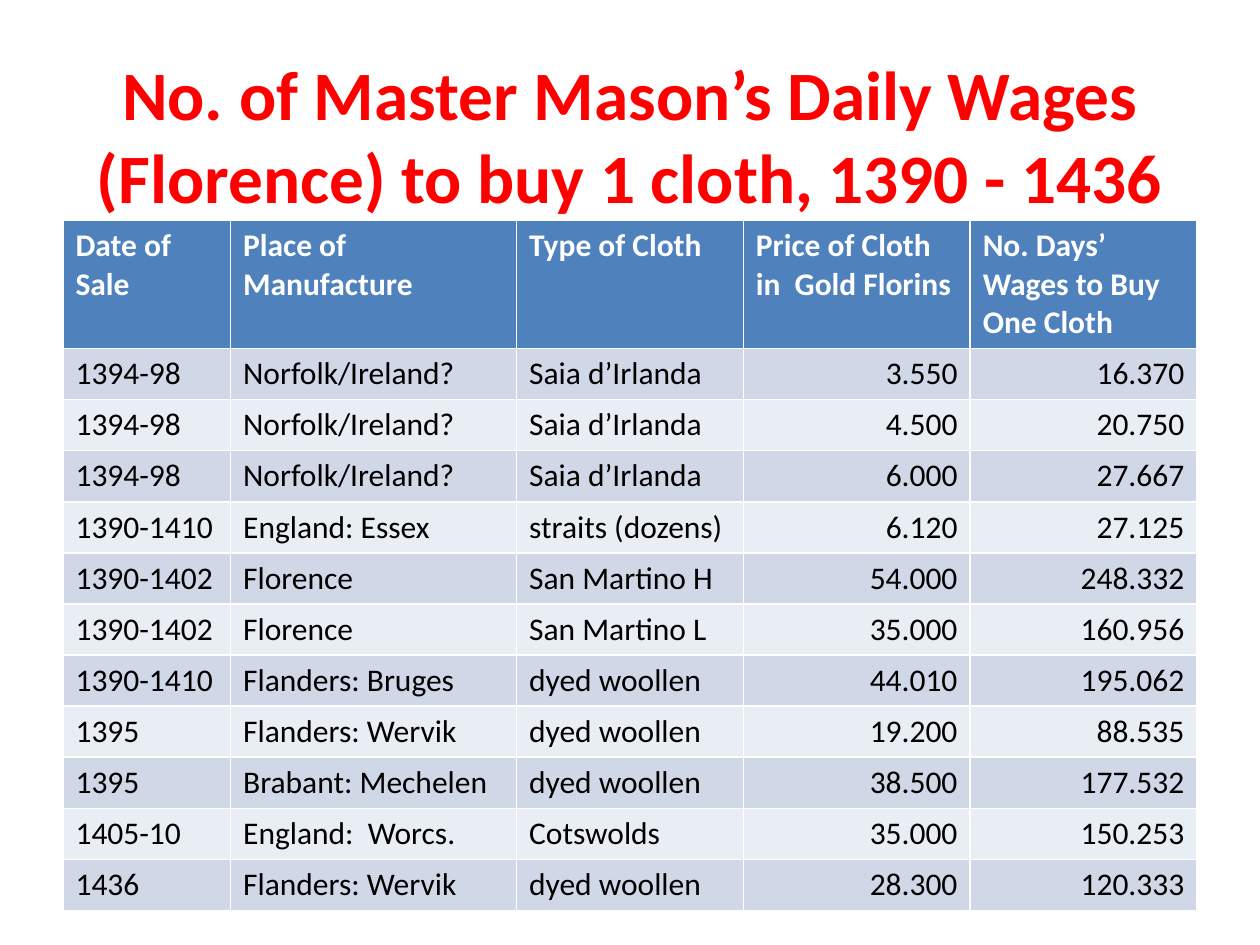
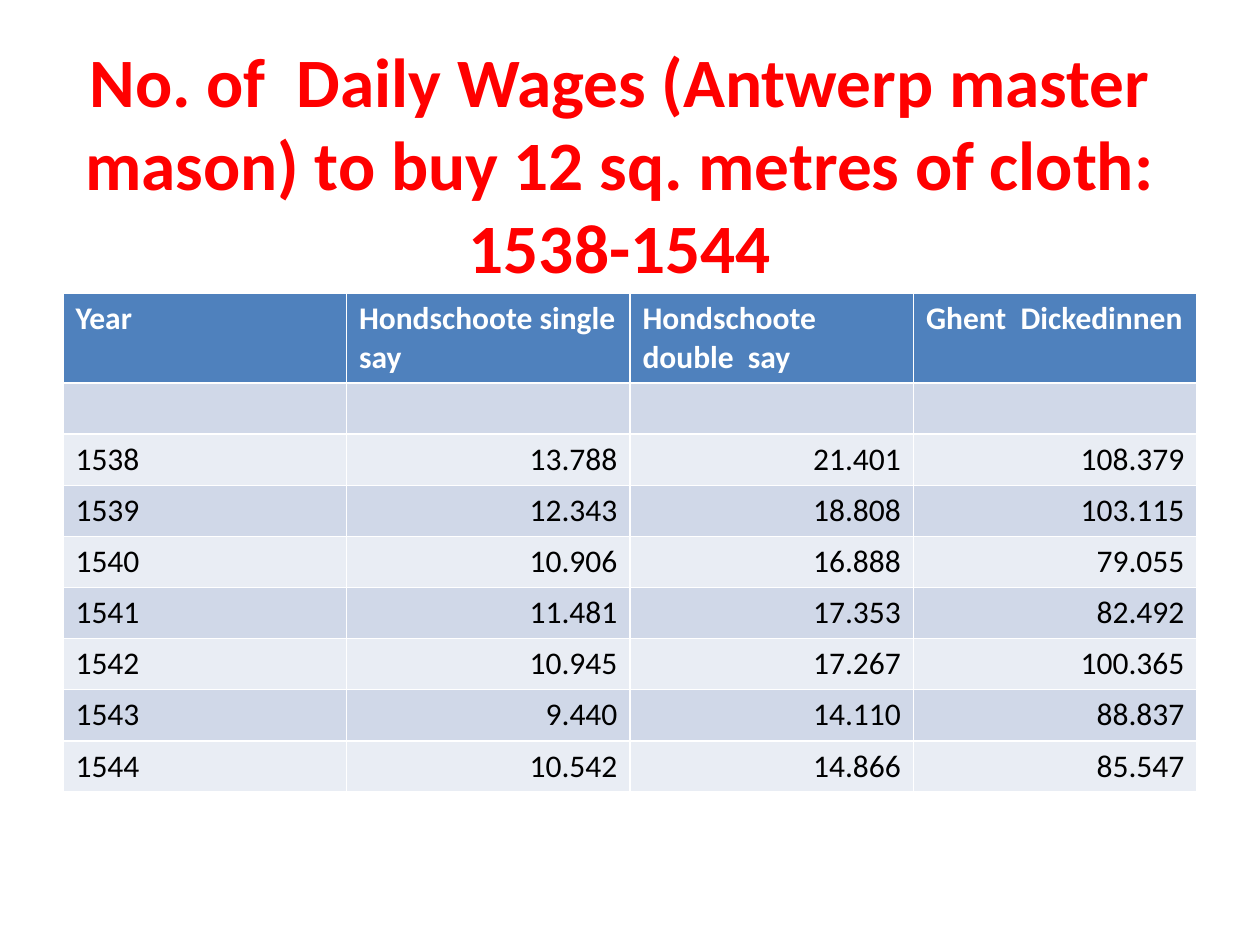
"""Build two slides of tables comparing cloth prices with master masons' wages."""
from pptx import Presentation
from pptx.dml.color import RGBColor
from pptx.enum.text import MSO_ANCHOR, MSO_AUTO_SIZE, PP_ALIGN
from pptx.util import Inches, Pt

LEFT, CENTER, RIGHT = PP_ALIGN.LEFT, PP_ALIGN.CENTER, PP_ALIGN.RIGHT
MIDDLE = MSO_ANCHOR.MIDDLE
NO_AUTOFIT = MSO_AUTO_SIZE.NONE

RED = RGBColor(0xFF, 0x00, 0x00)
WHITE = RGBColor(0xFF, 0xFF, 0xFF)
BLACK = RGBColor(0x00, 0x00, 0x00)
HEADER_BLUE = RGBColor(0x4F, 0x81, 0xBD)
BANDS = RGBColor(0xE9, 0xED, 0xF4), RGBColor(0xD0, 0xD8, 0xE8)

FONT = "Calibri"
TITLE_FORMAT = {"name": FONT, "size": Pt(39.6), "bold": True}
HEADER_FORMAT = {"name": FONT, "size": Pt(18), "bold": True}
BODY_FORMAT = {"name": FONT, "size": Pt(18), "bold": False}

SLIDE_WIDTH, SLIDE_HEIGHT = 10, 7.5
MARGIN = 0.05 * SLIDE_WIDTH
ROW_HEIGHT = 0.405

SLIDES = [
    {
        "title": "No. of Master Mason’s Daily Wages (Florence) to buy 1 cloth, 1390 - 1436",
        "title_box": (0.5, 0.3, 9, 1.53),
        "table_top": 1.75,
        "header_height": 1.0,
        "columns": [1.33, 2.27, 1.8, 1.8, 1.8],
        "text_columns": 3,
        "header": ["Date of Sale", "Place of Manufacture", "Type of Cloth",
                   "Price of Cloth in  Gold Florins", "No. Days’ Wages to Buy One Cloth"],
        "rows": [
            ("1394-98", "Norfolk/Ireland?", "Saia d’Irlanda", "3.550", "16.370"),
            ("1394-98", "Norfolk/Ireland?", "Saia d’Irlanda", "4.500", "20.750"),
            ("1394-98", "Norfolk/Ireland?", "Saia d’Irlanda", "6.000", "27.667"),
            ("1390-1410", "England: Essex", "straits (dozens)", "6.120", "27.125"),
            ("1390-1402", "Florence", "San Martino H", "54.000", "248.332"),
            ("1390-1402", "Florence", "San Martino L", "35.000", "160.956"),
            ("1390-1410", "Flanders: Bruges", "dyed woollen", "44.010", "195.062"),
            ("1395", "Flanders: Wervik", "dyed woollen", "19.200", "88.535"),
            ("1395", "Brabant: Mechelen", "dyed woollen", "38.500", "177.532"),
            ("1405-10", "England:  Worcs.", "Cotswolds", "35.000", "150.253"),
            ("1436", "Flanders: Wervik", "dyed woollen", "28.300", "120.333"),
        ],
    },
    {
        "title": "No. of  Daily Wages (Antwerp master mason) to buy 12 sq. metres of cloth: 1538-1544",
        "title_box": (0.42, 0.41, 9, 1.76),
        "table_top": 2.33,
        "header_height": 0.7,
        "columns": [2.25] * 4,
        "text_columns": 1,
        "header": ["Year", "Hondschoote single say", "Hondschoote double  say",
                   "Ghent  Dickedinnen"],
        "rows": [
            ("", "", "", ""),
            ("1538", "13.788", "21.401", "108.379"),
            ("1539", "12.343", "18.808", "103.115"),
            ("1540", "10.906", "16.888", "79.055"),
            ("1541", "11.481", "17.353", "82.492"),
            ("1542", "10.945", "17.267", "100.365"),
            ("1543", "9.440", "14.110", "88.837"),
            ("1544", "10.542", "14.866", "85.547"),
        ],
    },
]


def write(frame, text, alignment, font_format, color):
    paragraph = frame.paragraphs[0]
    paragraph.text = text
    paragraph.alignment = alignment
    for run in paragraph.runs:
        for attribute, value in font_format.items():
            setattr(run.font, attribute, value)
        run.font.color.rgb = color


def place_title(title, content):
    title.left, title.top, title.width, title.height = map(Inches, content["title_box"])
    frame = title.text_frame
    for attribute, value in {"auto_size": NO_AUTOFIT, "word_wrap": True,
                             "vertical_anchor": MIDDLE}.items():
        setattr(frame, attribute, value)
    write(frame, content["title"], CENTER, TITLE_FORMAT, RED)


def add_wage_table(slide, content):
    rows = [content["header"], *content["rows"]]
    columns = content["columns"]
    heights = [content["header_height"]] + [ROW_HEIGHT] * len(content["rows"])
    table = slide.shapes.add_table(
        len(rows), len(columns), Inches(MARGIN), Inches(content["table_top"]),
        Inches(sum(columns)), Inches(sum(heights))).table
    for column, width in zip(table.columns, columns):
        column.width = Inches(width)
    for r, (values, height) in enumerate(zip(rows, heights)):
        table.rows[r].height = Inches(height)
        is_header = r == 0
        for c, value in enumerate(values):
            cell = table.cell(r, c)
            cell.fill.solid()
            cell.fill.fore_color.rgb = HEADER_BLUE if is_header else BANDS[r % 2]
            alignment = LEFT if is_header or c < content["text_columns"] else RIGHT
            write(cell.text_frame, value, alignment,
                  HEADER_FORMAT if is_header else BODY_FORMAT,
                  WHITE if is_header else BLACK)


def main():
    deck = Presentation()
    deck.slide_width, deck.slide_height = Inches(SLIDE_WIDTH), Inches(SLIDE_HEIGHT)
    title_only = deck.slide_layouts.get_by_name("Title Only")
    for content in SLIDES:
        slide = deck.slides.add_slide(title_only)
        place_title(slide.shapes.title, content)
        add_wage_table(slide, content)
    deck.save("out.pptx")


if __name__ == "__main__":
    main()
